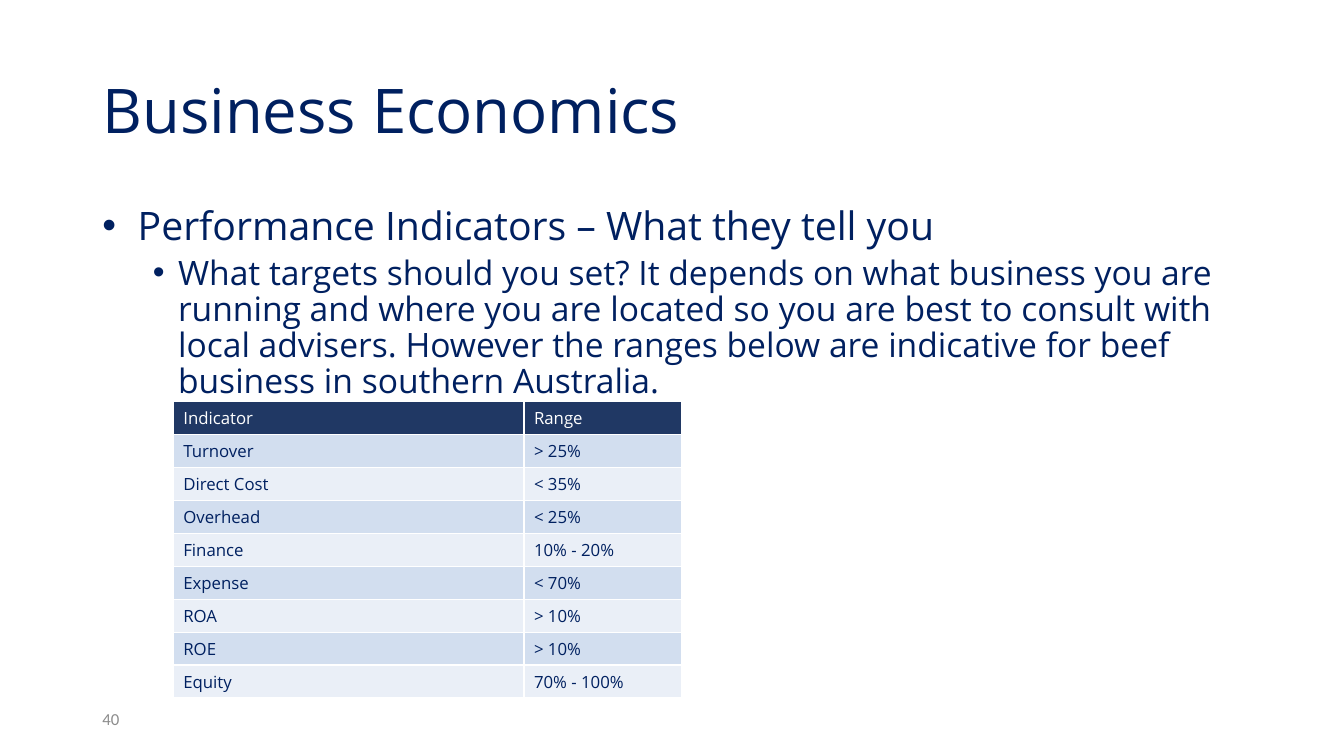
from lxml import etree
from pptx import Presentation
from pptx.dml.color import RGBColor
from pptx.enum import text as t
from pptx.oxml import ns
from pptx.util import Pt

# Content
TITLE = "Business Economics"
BULLETS = [
    dict(text="Performance Indicators – What they tell you",
         level=0, size="bullet", left=25.2, hanging=25.2, before=0),
    dict(text="What targets should you set? It depends on what business you are "
              "running and where you are located so you are best to consult with "
              "local advisers. However the ranges below are indicative for beef "
              "business in southern Australia.",
         level=1, size="sub_bullet", left=54, hanging=18, before=5),
]
INDICATORS = [
    ("Indicator", "Range"),
    ("Turnover", "> 25%"),
    ("Direct Cost", "< 35%"),
    ("Overhead", "< 25%"),
    ("Finance", "10% - 20%"),
    ("Expense", "< 70%"),
    ("ROA", "> 10%"),
    ("ROE", "> 10%"),
    ("Equity", "70% - 100%"),
]
PAGE_NUMBER = "40"

THEME = dict(
    font="Open Sans", number_font="Calibri",
    navy="002060", white="FFFFFF", grey="8C8C8C",
    header="203864", bands=("EAEFF7", "D2DEEF"),
    sizes=dict(title=44, bullet=28, sub_bullet=24, small=12),
)

# Layout in points: left, top, width, height
SLIDE_SIZE = (960, 540)
TITLE_BOX = (66, 28.75, 828, 104.4)
BODY_BOX = (66, 144, 828, 342.6)
NUMBER_BOX = (66, 499, 216, 28.75)
TABLE_LEFT, TABLE_TOP = 123.75, 286.6
COLUMN_WIDTHS = (250.5, 112.5)
ROW_HEIGHT = 22.25


def set_values(target, **values):
    for name, value in values.items():
        setattr(target, name, value)


def place(shape, box):
    left, top, width, height = map(Pt, box)
    set_values(shape, left=left, top=top, width=width, height=height)


def style(paragraph, size, color, font=THEME["font"]):
    set_values(paragraph.font, size=Pt(THEME["sizes"][size]), name=font, bold=False)
    paragraph.font.color.rgb = RGBColor.from_string(color)


def fill_frame(frame, anchor):
    set_values(frame, word_wrap=True, auto_size=t.MSO_AUTO_SIZE.NONE,
               vertical_anchor=anchor)


def add_bullet(paragraph, left, hanging):
    properties = paragraph._p.get_or_add_pPr()
    properties.set("marL", str(Pt(left)))
    properties.set("indent", str(-Pt(hanging)))
    etree.SubElement(properties, ns.qn("a:buFont"), typeface="Arial")
    etree.SubElement(properties, ns.qn("a:buChar"), char="•")


def add_borders(cell, color, width):
    properties = cell._tc.get_or_add_tcPr()
    for side in ("lnL", "lnR", "lnT", "lnB"):
        line = etree.SubElement(properties, ns.qn(f"a:{side}"), w=str(Pt(width)))
        fill = etree.SubElement(line, ns.qn("a:solidFill"))
        etree.SubElement(fill, ns.qn("a:srgbClr"), val=color)


def add_title(slide):
    title = slide.shapes.title
    place(title, TITLE_BOX)
    fill_frame(title.text_frame, t.MSO_ANCHOR.MIDDLE)
    paragraph = title.text_frame.paragraphs[0]
    paragraph.text = TITLE
    set_values(paragraph, alignment=t.PP_ALIGN.LEFT, line_spacing=0.9)
    style(paragraph, "title", THEME["navy"])


def add_body(slide):
    body = slide.placeholders[1]
    place(body, BODY_BOX)
    frame = body.text_frame
    fill_frame(frame, t.MSO_ANCHOR.TOP)
    for index, bullet in enumerate(BULLETS):
        paragraph = frame.add_paragraph() if index else frame.paragraphs[0]
        set_values(paragraph, text=bullet["text"], level=bullet["level"],
                   line_spacing=0.9, space_before=Pt(bullet["before"]))
        add_bullet(paragraph, bullet["left"], bullet["hanging"])
        style(paragraph, bullet["size"], THEME["navy"])


def add_page_number(slide):
    box = slide.shapes.add_textbox(*map(Pt, NUMBER_BOX))
    fill_frame(box.text_frame, t.MSO_ANCHOR.MIDDLE)
    paragraph = box.text_frame.paragraphs[0]
    paragraph.text = PAGE_NUMBER
    style(paragraph, "small", THEME["grey"], THEME["number_font"])


def add_indicator_table(slide):
    box = (TABLE_LEFT, TABLE_TOP, sum(COLUMN_WIDTHS), ROW_HEIGHT * len(INDICATORS))
    table = slide.shapes.add_table(
        len(INDICATORS), len(COLUMN_WIDTHS), *map(Pt, box)).table
    for column, width in zip(table.columns, COLUMN_WIDTHS):
        column.width = Pt(width)
    for row_index, values in enumerate(INDICATORS):
        table.rows[row_index].height = Pt(ROW_HEIGHT)
        is_header = row_index == 0
        fill = THEME["header"] if is_header else THEME["bands"][row_index % 2]
        color = THEME["white"] if is_header else THEME["navy"]
        for column_index, value in enumerate(values):
            cell = table.cell(row_index, column_index)
            cell.text = value
            style(cell.text_frame.paragraphs[0], "small", color)
            add_borders(cell, THEME["white"], 1)
            cell.fill.solid()
            cell.fill.fore_color.rgb = RGBColor.from_string(fill)


def main():
    presentation = Presentation()
    width, height = map(Pt, SLIDE_SIZE)
    set_values(presentation, slide_width=width, slide_height=height)
    slide = presentation.slides.add_slide(presentation.slide_layouts[1])
    add_title(slide)
    add_body(slide)
    add_page_number(slide)
    add_indicator_table(slide)
    presentation.save("out.pptx")


if __name__ == "__main__":
    main()
